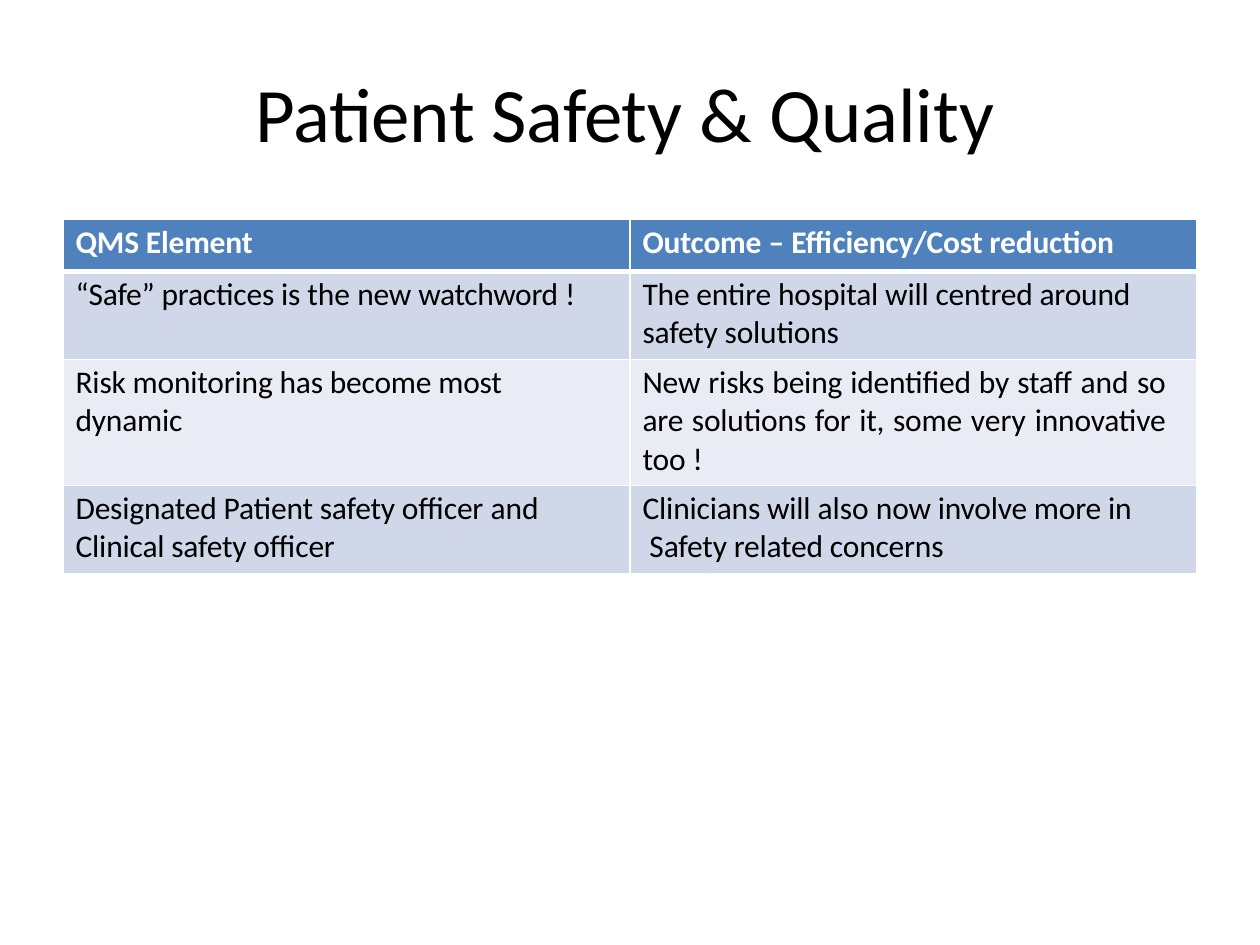
from lxml import etree
from pptx import Presentation
from pptx.dml.color import RGBColor
from pptx.enum.text import MSO_ANCHOR, PP_ALIGN
from pptx.oxml.ns import qn
from pptx.util import Pt

LEFT, JUSTIFY = PP_ALIGN.LEFT, PP_ALIGN.JUSTIFY
TOP = MSO_ANCHOR.TOP
TITLE_ONLY = 5
FONT = "Calibri"
COLORS = {"header": "4F81BC", "odd": "D0D7E8", "even": "E9ECF4",
          "border": "FFFFFF", "light": "FFFFFF", "dark": "000000"}
BREAK = ("\n", 0)

# Each run is its text and its letter spacing in points
TITLE = [("Patient Safety ", -0.2), ("& Quality", 0)]
ROWS = [
    [[("QMS Element", -0.1)],
     [("Outcome ", -0.1), ("– ", 0), ("Efficiency/Cost reduction", -0.1)]],
    [[("“Safe” practices is ", -0.1), ("the ", 0), ("new ", -0.1),
      ("watchword ", -0.2), ("!", 0)],
     [("The entire hospital will centred around safety solutions", -0.1)]],
    [[("Risk monitoring has become most dynamic", -0.1)],
     [("New risks being identified by staff ", -0.1), ("and ", 0),
      ("so are solutions for it, some ", -0.1), ("very ", 0),
      ("innovative too ", -0.1), ("!", 0)]],
    [[("Designated Patient safety officer ", -0.1), ("and ", 0),
      ("Clinical safety officer", -0.1)],
     [("Clinicians will ", -0.1), ("also ", 0),
      ("now involve more in", -0.1), BREAK,
      (" Safety related concerns", -0.1)]],
]
ROW_HEIGHTS = [29.6, 50.4, 72, 50.4]
COLUMN_WIDTH = 324
JUSTIFIED_CELL = (2, 1)


def write_runs(para, runs, size, color, bold=False):
    for run in runs:
        if run == BREAK:
            para.add_line_break()
            continue
        text, spacing = run
        span = para.add_run()
        span.text = text
        span.font.name = FONT
        span.font.size = Pt(size)
        span.font.bold = bold
        span.font.color.rgb = RGBColor.from_string(COLORS[color])
        span._r.get_or_add_rPr().set("spc", str(round(spacing * 100)))


def set_borders(cell, widths):
    properties = cell._tc.get_or_add_tcPr()
    for index, (side, width) in enumerate(widths.items()):
        line = etree.Element(qn(f"a:ln{side}"), w=str(Pt(width)))
        fill = etree.SubElement(line, qn("a:solidFill"))
        etree.SubElement(fill, qn("a:srgbClr"), val=COLORS["border"])
        properties.insert(index, line)


def add_title(page):
    box = page.shapes.title
    box.left, box.top, box.width, box.height = Pt(146), Pt(36.7), Pt(427), Pt(54.7)
    frame = box.text_frame
    frame.margin_left = frame.margin_right = frame.margin_bottom = 0
    frame.margin_top = Pt(1)
    frame.vertical_anchor = TOP
    para = frame.paragraphs[0]
    para.alignment = LEFT
    para.space_before = Pt(1.1)
    write_runs(para, TITLE, 44, "dark")


def fill_cell(cell, runs, row, column):
    header = row == 0
    fill = "header" if header else "odd" if row % 2 else "even"
    cell.fill.solid()
    cell.fill.fore_color.rgb = RGBColor.from_string(COLORS[fill])
    cell.margin_left, cell.margin_right = Pt(7.2), Pt(18)
    cell.margin_top, cell.margin_bottom = Pt(2.2), 0
    cell.vertical_anchor = TOP
    para = cell.text_frame.paragraphs[0]
    para.alignment = JUSTIFY if (row, column) == JUSTIFIED_CELL else LEFT
    para.space_before = Pt(2.4)
    write_runs(para, runs, 18, "light" if header else "dark", bold=header)
    # The rule below the header is heavier than the others
    set_borders(cell, {"L": 1, "R": 1, "T": 3 if row == 1 else 1,
                       "B": 3 if header else 1})


def add_outcome_table(page):
    frame = page.shapes.add_table(len(ROWS), 2, Pt(36), Pt(125.5),
                                  Pt(2 * COLUMN_WIDTH), Pt(sum(ROW_HEIGHTS)))
    table = frame.table
    for column in table.columns:
        column.width = Pt(COLUMN_WIDTH)
    for row, (height, cells) in enumerate(zip(ROW_HEIGHTS, ROWS)):
        table.rows[row].height = Pt(height)
        for column, runs in enumerate(cells):
            fill_cell(table.cell(row, column), runs, row, column)


def main():
    deck = Presentation()
    deck.slide_width, deck.slide_height = Pt(720), Pt(540)
    page = deck.slides.add_slide(deck.slide_layouts[TITLE_ONLY])
    add_title(page)
    add_outcome_table(page)
    deck.save("out.pptx")


if __name__ == "__main__":
    main()
